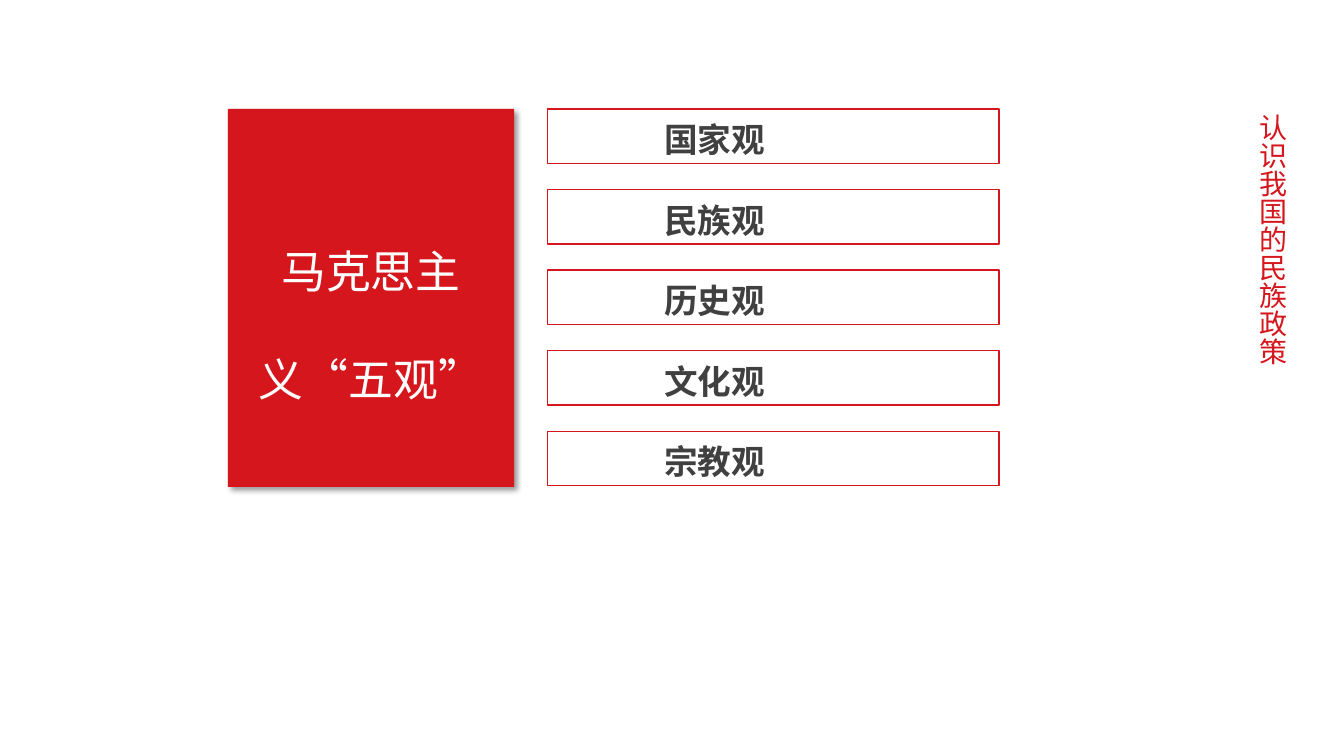
from lxml.etree import SubElement
from pptx import Presentation
from pptx.dml.color import RGBColor
from pptx.enum.lang import MSO_LANGUAGE_ID
from pptx.enum.shapes import MSO_SHAPE
from pptx.enum.text import MSO_ANCHOR, MSO_AUTO_SIZE, PP_ALIGN
from pptx.oxml.ns import qn
from pptx.util import Inches, Pt

RED = RGBColor(0xD5, 0x16, 0x1D)
WHITE = RGBColor(0xFF, 0xFF, 0xFF)
GREY = RGBColor(0x40, 0x40, 0x40)
BLACK = RGBColor(0, 0, 0)
FONT = "Noto Sans CJK SC"
CELL = Inches(0.1)

VIEWS = ["国家观", "民族观", "历史观", "文化观", "宗教观"]
TOP = 10.8
VIEW_PITCH = 8


class ViewsSlide:
    def __init__(self, deck):
        self.slide = deck.slides.add_slide(deck.slide_layouts[5])

    def area(self, column, row, columns, rows):
        """Turn grid columns and rows into left, top, width and height."""
        return [int(cells * CELL) for cells in (column, row, columns, rows)]

    def set_text(self, shape, text, size, color, align, spacing=None, bold=False,
                 anchor=MSO_ANCHOR.MIDDLE, auto_size=MSO_AUTO_SIZE.NONE):
        frame = shape.text_frame
        frame.text = text
        frame.word_wrap = True
        frame.auto_size = auto_size
        frame.vertical_anchor = anchor
        paragraph = frame.paragraphs[0]
        paragraph.alignment = align
        paragraph.line_spacing = spacing
        font = paragraph.font
        font.size = Pt(size)
        font.bold = bold
        font.color.rgb = color
        font.name = FONT
        font.language_id = MSO_LANGUAGE_ID.SIMPLIFIED_CHINESE
        character_style = paragraph._p.pPr.find(qn("a:defRPr"))
        SubElement(character_style, qn("a:ea"), typeface=FONT)

    def vertical_title(self, text, *cells):
        title = self.slide.shapes.title
        title.left, title.top, title.width, title.height = self.area(*cells)
        self.set_text(title, text, 20, RED, PP_ALIGN.JUSTIFY, spacing=1.5)
        title.element.txBody.bodyPr.set("vert", "eaVert")

    def topic_panel(self, text, *cells):
        panel = self.slide.shapes.add_shape(MSO_SHAPE.RECTANGLE, *self.area(*cells))
        panel.fill.solid()
        panel.fill.fore_color.rgb = RED
        panel.line.fill.background()
        self.cast_shadow(panel)
        self.set_text(panel, text, 32, WHITE, PP_ALIGN.CENTER, spacing=2)

    def cast_shadow(self, shape):
        """Give the shape a soft shadow to its lower right."""
        shape.shadow.inherit = False
        effects = shape.element.spPr.find(qn("a:effectLst"))
        shadow = SubElement(effects, qn("a:outerShdw"), blurRad=str(Pt(4)),
                            dist=str(Pt(3)), dir=str(45 * 60000),
                            algn="tl", rotWithShape="0")
        color = SubElement(shadow, qn("a:srgbClr"), val=str(BLACK))
        SubElement(color, qn("a:alpha"), val="40000")

    def view_box(self, text, column, row):
        """Group an outlined bar with its label."""
        group = self.slide.shapes.add_group_shape()
        bar = group.shapes.add_shape(MSO_SHAPE.RECTANGLE,
                                     *self.area(column, row, 44.8, 5.4))
        bar.shadow.inherit = False
        bar.fill.background()
        bar.line.color.rgb = RED
        bar.line.width = Pt(1)
        label = group.shapes.add_textbox(
            *self.area(column + 10.6, row + 0.5, 23.6, 5))
        self.set_text(label, text, 24, GREY, PP_ALIGN.JUSTIFY, bold=True,
                      anchor=MSO_ANCHOR.TOP,
                      auto_size=MSO_AUTO_SIZE.SHAPE_TO_FIT_TEXT)


def main():
    deck = Presentation()
    deck.slide_width = Inches(13.33)
    deck.slide_height = Inches(7.5)
    views_slide = ViewsSlide(deck)
    views_slide.vertical_title("认识我国的民族政策", 124.2, TOP, 5.7, 42.6)
    views_slide.topic_panel("马克思主义“五观”", 22.6, TOP, 28.4, 37.5)
    for index, view in enumerate(VIEWS):
        views_slide.view_box(view, 54.3, TOP + index * VIEW_PITCH)
    deck.save("out.pptx")


if __name__ == "__main__":
    main()
